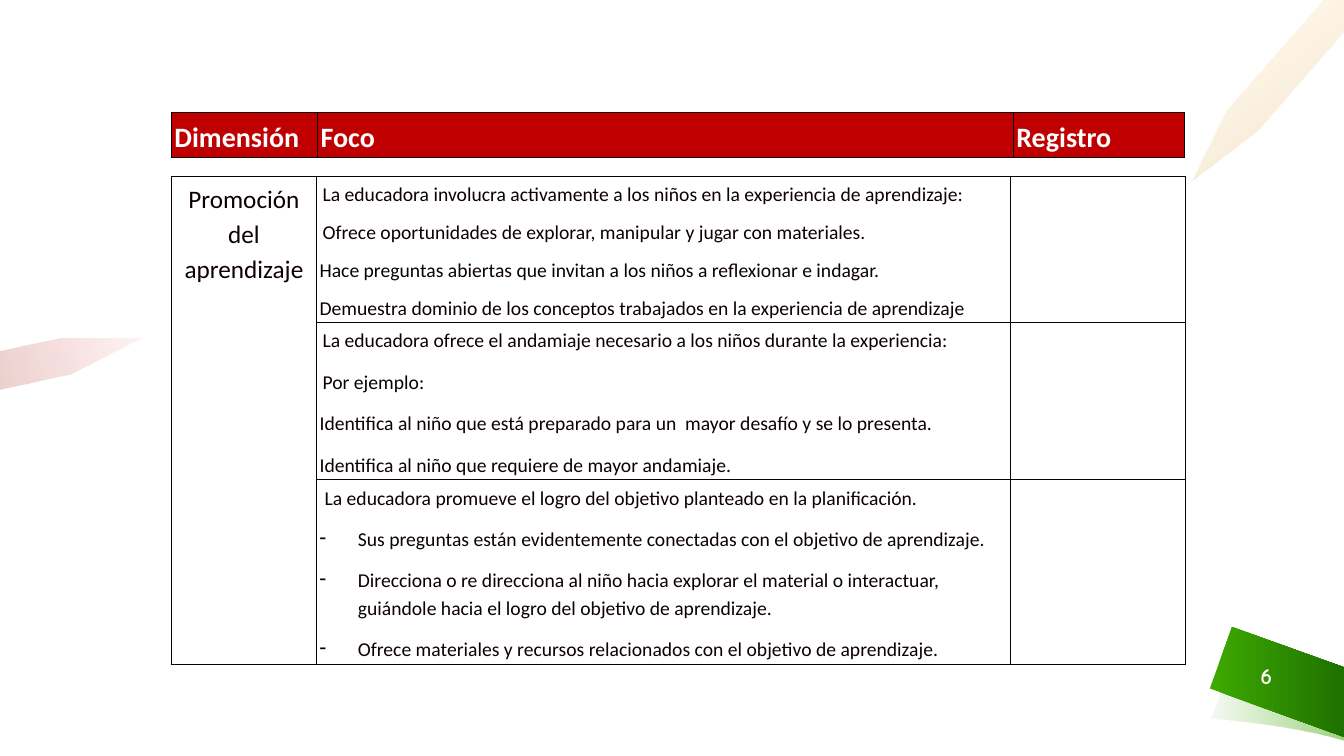
from dataclasses import dataclass

from lxml import etree
from pptx import Presentation
from pptx.dml.color import RGBColor
from pptx.enum import text
from pptx.oxml import ns
from pptx.util import Inches, Pt

INK = RGBColor(0x0C, 0x01, 0x00)
WHITE = RGBColor(0xFF, 0xFF, 0xFF)
RED = RGBColor(0xC0, 0x00, 0x00)
GREEN = RGBColor(0x3D, 0xA8, 0x00)
DARK_GREEN = RGBColor(0x1F, 0x71, 0x00)
SCARLET = RGBColor(0xD3, 0x0F, 0x00)
MAROON = RGBColor(0x9D, 0x0F, 0x00)
AMBER = RGBColor(0xFF, 0xAA, 0x00)
BROWN = RGBColor(0xC0, 0x74, 0x00)
BODY_FONT = "Calibri"
NUMBER_FONT = "Comic Neue"

Point = tuple[float, float]


@dataclass(frozen=True)
class Stop:
    position: float
    color: RGBColor
    opacity: int = 100


@dataclass(frozen=True)
class Stroke:
    points: list[Point]
    stops: tuple[Stop, Stop]
    angle: int = 0  # clockwise degrees


@dataclass(frozen=True)
class Line:
    words: str
    margin: float = 0
    indent: float = 0
    spacing: float = 1.15
    bullet: str = ""


@dataclass(frozen=True)
class Style:
    size: int
    color: RGBColor = INK
    bold: bool = False
    alignment: text.PP_ALIGN = text.PP_ALIGN.LEFT


def curve(start: Point, first: Point, second: Point, end: Point, steps: int = 12) -> list[Point]:
    """Points along a cubic curve."""
    points = []
    for step in range(steps + 1):
        t = step / steps
        weights = ((1 - t) ** 3, 3 * t * (1 - t) ** 2, 3 * t ** 2 * (1 - t), t ** 3)
        corners = (start, first, second, end)
        points.append((sum(w * c[0] for w, c in zip(weights, corners)),
                       sum(w * c[1] for w, c in zip(weights, corners))))
    return points


def draw_stroke(slide, stroke: Stroke) -> None:
    points = [(Inches(x), Inches(y)) for x, y in stroke.points]
    builder = slide.shapes.build_freeform(*points[0])
    builder.add_line_segments(points[1:], close=True)
    shape = builder.convert_to_shape()
    shape.shadow.inherit = False
    shape.line.fill.background()
    shape.fill.gradient()
    shape.fill.gradient_angle = -stroke.angle % 360
    for gradient_stop, stop in zip(shape.fill.gradient_stops, stroke.stops):
        gradient_stop.position = stop.position
        gradient_stop.color.rgb = stop.color
    colors = shape._element.spPr.iter(ns.qn("a:srgbClr"))
    for color, stop in zip(list(colors), stroke.stops):
        if stop.opacity < 100:
            etree.SubElement(color, ns.qn("a:alpha"), val=str(stop.opacity * 1000))


def add_run(paragraph, words: str, style: Style, font_name: str = BODY_FONT) -> None:
    paragraph.alignment = style.alignment
    run = paragraph.add_run()
    run.text = words
    run.font.name = font_name
    run.font.size = Pt(style.size)
    run.font.bold = style.bold
    run.font.color.rgb = style.color


def format_cell(cell, fill: RGBColor) -> None:
    cell.margin_left = cell.margin_right = Inches(0.03)
    cell.margin_top = cell.margin_bottom = Inches(0.03)
    cell.fill.solid()
    cell.fill.fore_color.rgb = fill
    properties = cell._tc.get_or_add_tcPr()
    for index, side in enumerate(("lnL", "lnR", "lnT", "lnB")):
        border = etree.Element(ns.qn(f"a:{side}"), w=str(Pt(1)))
        solid = etree.SubElement(border, ns.qn("a:solidFill"))
        etree.SubElement(solid, ns.qn("a:srgbClr"), val=str(INK))
        properties.insert(index, border)


def write_cell(cell, lines: list[Line], style: Style) -> None:
    frame = cell.text_frame
    for index, line in enumerate(lines):
        paragraph = frame.add_paragraph() if index else frame.paragraphs[0]
        properties = paragraph._p.get_or_add_pPr()
        properties.set("marL", str(Inches(line.margin)))
        properties.set("indent", str(Inches(line.indent)))
        if line.bullet:
            etree.SubElement(properties, ns.qn("a:buChar"), char=line.bullet)
        paragraph.line_spacing = line.spacing
        paragraph.space_after = Pt(10)
        add_run(paragraph, line.words, style)


def add_grid(slide, top: float, columns: list[float], rows: list[float], fill: RGBColor):
    table = slide.shapes.add_table(len(rows), len(columns), Inches(1.7), Inches(top),
                                   Inches(sum(columns)), Inches(sum(rows))).table
    table.first_row = table.horz_banding = False
    for column, width in zip(table.columns, columns):
        column.width = Inches(width)
    for row, height in zip(table.rows, rows):
        row.height = Inches(height)
    for cell in table.iter_cells():
        format_cell(cell, fill)
    return table


def lead(words: str, indent: float = -0.02, spacing: float = 1.15) -> Line:
    return Line(words, 0.05, indent, spacing)


def dash(words: str) -> Line:
    return Line(words, 0.38, -0.38, bullet="-")


STROKES = [
    # Green corner: soft shade, then band
    Stroke(curve((12.02, 7.13), (12.02, 7.13), (12.78, 7.18), (13.33, 7.35))
           + curve((13.33, 6.68), (12.72, 6.51), (12.24, 6.52), (12.24, 6.52)),
           (Stop(0.03, GREEN, 6), Stop(1, GREEN, 50))),
    Stroke([(13.33, 6.62), (12.22, 6.22), (12, 6.83), (13.33, 7.31)],
           (Stop(0.03, GREEN), Stop(1, DARK_GREEN))),
    # Red stroke at the left
    Stroke([(1.4, 3.36), (0.58, 3.36), (0, 3.48), (0, 3.86), (0.7, 3.71)],
           (Stop(0, SCARLET, 5), Stop(1, MAROON, 20)), 164),
    # Amber stroke at the top right
    Stroke([(13.12, 0), (12.17, 1.09), (11.82, 1.8), (12.47, 1.3), (13.33, 0.31), (13.33, 0)],
           (Stop(0, AMBER, 5), Stop(1, BROWN, 20)), 53),
]

HEADINGS = ["Dimensión", "Foco", "Registro"]
FOCUS = [
    [lead("La educadora involucra activamente a los niños en la experiencia de aprendizaje:"),
     lead("Ofrece oportunidades de explorar, manipular y jugar con materiales.", spacing=1),
     Line("Hace preguntas abiertas que invitan a los niños a reflexionar e indagar.", spacing=1),
     Line("Demuestra dominio de los conceptos trabajados en la experiencia de aprendizaje",
          spacing=1)],
    [lead("La educadora ofrece el andamiaje necesario a los niños durante la experiencia:"),
     lead("Por ejemplo:"),
     Line("Identifica al niño que está preparado para un  mayor desafío y se lo presenta."),
     Line("Identifica al niño que requiere de mayor andamiaje.")],
    [lead("La educadora promueve el logro del objetivo planteado en la planificación.", indent=0),
     dash("Sus preguntas están evidentemente conectadas con el objetivo de aprendizaje."),
     dash("Direcciona o re direcciona al niño hacia explorar el material o interactuar, "
          "guiándole hacia el logro del objetivo de aprendizaje."),
     dash("Ofrece materiales y recursos relacionados con el objetivo de aprendizaje.")],
]


def main() -> None:
    presentation = Presentation()
    presentation.slide_width, presentation.slide_height = Inches(13.33), Inches(7.5)
    slide = presentation.slides.add_slide(presentation.slide_layouts[6])

    for stroke in STROKES:
        draw_stroke(slide, stroke)

    # Slide number
    number = slide.shapes.add_textbox(Inches(12.21), Inches(6.5), Inches(0.7), Inches(0.4))
    number.text_frame.word_wrap = True
    number.text_frame.vertical_anchor = text.MSO_ANCHOR.MIDDLE
    add_run(number.text_frame.paragraphs[0], "6",
            Style(16, WHITE, True, text.PP_ALIGN.CENTER), NUMBER_FONT)

    # Focus table
    focus_table = add_grid(slide, 1.75, [1.44, 6.88, 1.74], [1.45, 1.56, 1.83], WHITE)
    focus_table.cell(0, 0).merge(focus_table.cell(2, 0))
    write_cell(focus_table.cell(0, 0), [Line("Promoción del aprendizaje")],
               Style(18, alignment=text.PP_ALIGN.CENTER))
    for row, lines in enumerate(FOCUS):
        write_cell(focus_table.cell(row, 1), lines, Style(14))

    # Heading table
    heading_table = add_grid(slide, 1.12, [1.45, 6.9, 1.7], [0.44], RED)
    for column, heading in enumerate(HEADINGS):
        write_cell(heading_table.cell(0, column), [Line(heading)], Style(20, WHITE, True))

    presentation.save("out.pptx")


if __name__ == "__main__":
    main()
